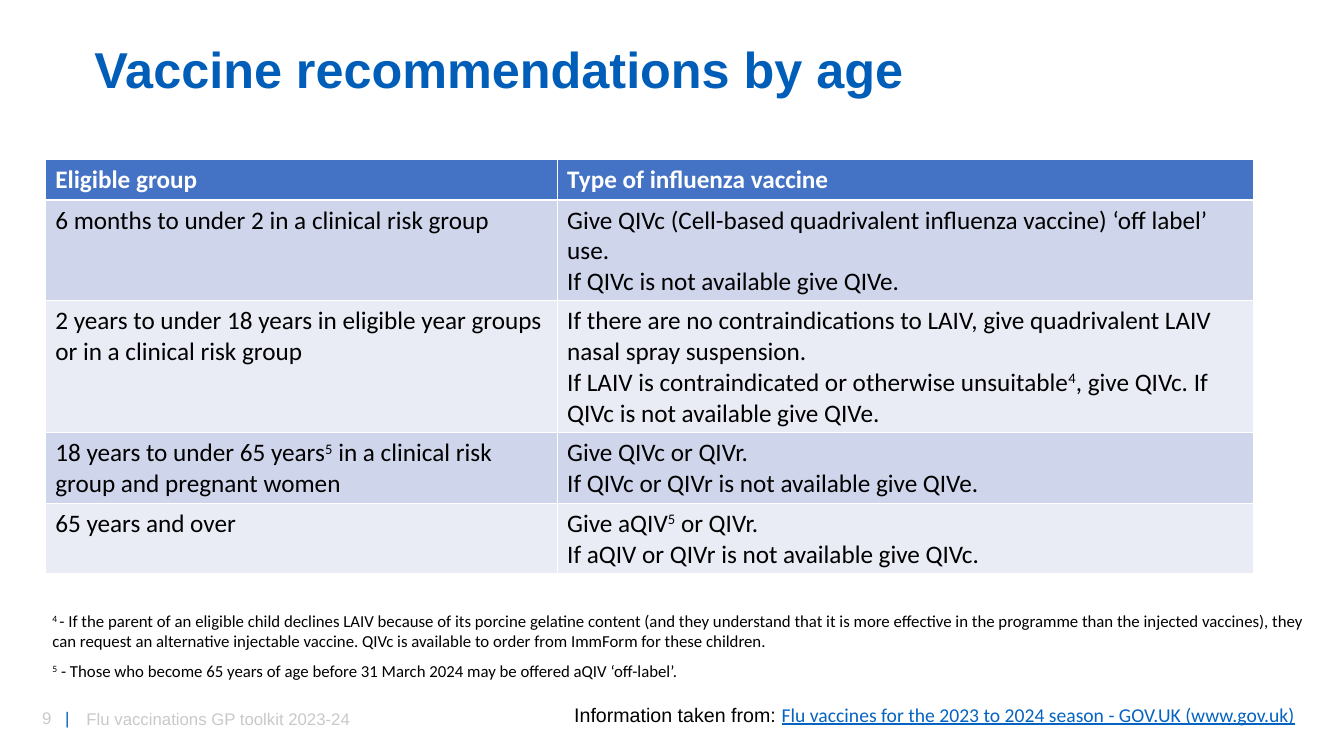
from pptx import Presentation
from pptx.dml.color import RGBColor
from pptx.enum.text import MSO_ANCHOR
from pptx.oxml.ns import qn
from pptx.util import Cm, Pt
from lxml.etree import SubElement

BLUE = RGBColor(0x00, 0x5E, 0xB8)
LINK_BLUE = RGBColor(0x05, 0x63, 0xC1)
HEADER_BLUE = RGBColor(0x44, 0x72, 0xC4)
BAND_DARK = RGBColor(0xCF, 0xD5, 0xEA)
BAND_LIGHT = RGBColor(0xE9, 0xEB, 0xF5)
GREY = RGBColor(0xC9, 0xC9, 0xC9)
WHITE = RGBColor(0xFF, 0xFF, 0xFF)
BLACK = RGBColor(0x00, 0x00, 0x00)

# Content: each cell is a list of paragraphs, ^ marks surround superscripts
TITLE = "Vaccine recommendations by age"
ROWS = [
    (["Eligible group"], ["Type of influenza vaccine"]),
    (["6 months to under 2 in a clinical risk group"],
     ["Give QIVc (Cell-based quadrivalent influenza vaccine) ‘off label’ use.",
      "If QIVc is not available give QIVe."]),
    (["2 years to under 18 years in eligible year groups or in a clinical risk group"],
     ["If there are no contraindications to LAIV, give quadrivalent LAIV",
      "nasal spray suspension.",
      "If LAIV is contraindicated or otherwise unsuitable^4^, give QIVc. "
      "If QIVc is not available give QIVe."]),
    (["18 years to under 65 years^5^ in a clinical risk group and pregnant women"],
     ["Give QIVc or QIVr.", "If QIVc or QIVr is not available give QIVe."]),
    (["65 years and over"],
     ["Give aQIV^5^ or QIVr.", "If aQIV or QIVr is not available give QIVc."]),
]
FOOTNOTES = [
    "^4 ^- If the parent of an eligible child declines LAIV because of its porcine "
    "gelatine content (and they understand that it is more effective in the programme "
    "than the injected vaccines), they can request an alternative injectable vaccine. "
    "QIVc is available to order from ImmForm for these children.",
    "^5^ - Those who become 65 years of age before 31 March 2024 may be offered "
    "aQIV ‘off-label’.",
]
FOOTER = "Flu vaccinations GP toolkit 2023-24"
SOURCE = ("Information taken from: ",
          "Flu vaccines for the 2023 to 2024 season - GOV.UK (www.gov.uk)")
COLUMN_WIDTHS = (12.9, 17.55)
ROW_HEIGHTS = (1.03, 2.54, 3.32, 1.78, 1.78)

deck = Presentation()
deck.slide_width, deck.slide_height = Cm(33.87), Cm(19.05)
page = deck.slides.add_slide(deck.slide_layouts[6])


def style(font, size, name, color, bold=False):
    font.size, font.name, font.bold = Pt(size), name, bold
    font.color.rgb = color


def add_box(left, top, width, height, anchor=MSO_ANCHOR.TOP):
    frame = page.shapes.add_textbox(Cm(left), Cm(top), Cm(width), Cm(height)).text_frame
    frame.word_wrap = True
    frame.vertical_anchor = anchor
    return frame


def add_span(para, text):
    span = para.add_run()
    span.text = text
    return span


def write(frame, lines, size, color, bold=False, gap=0):
    """Fill a frame with Calibri paragraphs, raising the parts between ^ marks."""
    for number, line in enumerate(lines):
        para = frame.add_paragraph() if number else frame.paragraphs[0]
        style(para.font, size, "Calibri", color, bold)
        if number:
            para.space_before = Pt(gap)
        for part, text in enumerate(line.split("^")):
            if text:
                span = add_span(para, text)
                if part % 2:
                    span.font._element.set("baseline", "30000")


# Title
para = add_box(2.13, 0.97, 29.57, 1.7, MSO_ANCHOR.MIDDLE).paragraphs[0]
para.line_spacing = 0.9
style(para.font, 36, "Arial", BLUE, True)
add_span(para, TITLE)

# Vaccine table
table = page.shapes.add_table(len(ROWS), 2, Cm(1.14), Cm(4.01),
                              Cm(sum(COLUMN_WIDTHS)), Cm(sum(ROW_HEIGHTS))).table
for column, width in zip(table.columns, COLUMN_WIDTHS):
    column.width = Cm(width)
for index, (cells, height) in enumerate(zip(ROWS, ROW_HEIGHTS)):
    header = index == 0
    table.rows[index].height = Cm(height)
    for column, lines in enumerate(cells):
        cell = table.cell(index, column)
        cell.fill.solid()
        cell.fill.fore_color.rgb = (HEADER_BLUE if header
                                    else BAND_DARK if index % 2 else BAND_LIGHT)
        write(cell.text_frame, lines, 18, WHITE if header else BLACK, header)

# Footnotes
write(add_box(1.07, 15.27, 32.49, 2.06), FOOTNOTES, 12, BLACK, gap=7)

# Page number, with a tab before the divider
para = add_box(0.81, 17.7, 1.8, 0.76).paragraphs[0]
tabs = SubElement(para._p.get_or_add_pPr(), qn("a:tabLst"))
SubElement(tabs, qn("a:tab"), pos=str(Cm(0.58)), algn="l")
style(para.font, 12, "Arial", GREY)
add_span(para, "9\t")
add_span(para, "|").font.color.rgb = BLUE

# Footer
para = add_box(1.93, 17.6, 15.9, 1.02, MSO_ANCHOR.MIDDLE).paragraphs[0]
style(para.font, 12, "Arial", GREY)
add_span(para, FOOTER)

# Source of the information
para = add_box(14.22, 17.58, 19.35, 0.86).paragraphs[0]
style(add_span(para, SOURCE[0]).font, 14, "Arial", BLACK)
link = add_span(para, SOURCE[1])
style(link.font, 14, "Calibri", LINK_BLUE)
link.font.underline = True

deck.save("out.pptx")
